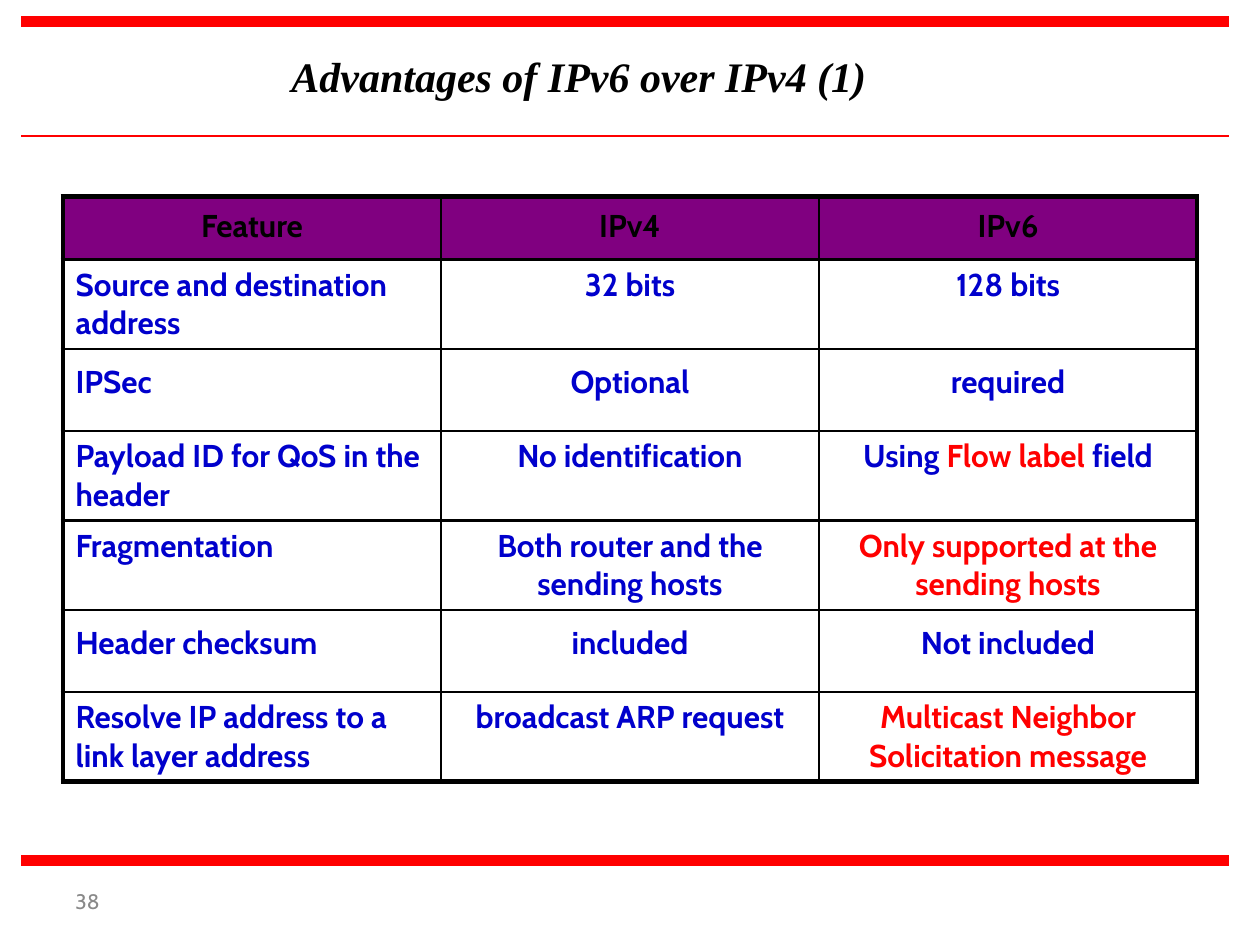
"""Build the slide that compares IPv4 and IPv6 features in a table."""
from lxml import etree
from pptx import Presentation, util as u
from pptx.dml.color import RGBColor
from pptx.enum import shapes, text
from pptx.oxml.ns import qn

COLORS = {"ink": "000000", "body": "0000CC", "accent": "FF0000",
          "header": "800080", "number": "898989"}
CENTER, LEFT = text.PP_ALIGN.CENTER, text.PP_ALIGN.LEFT


def write(p, words, font="Cabin", size=18, color="body", bold=True,
          italic=False, align=LEFT, spacing=1.0, before=0):
    """Fill a paragraph; parts between bars take the accent colour."""
    p.alignment, p.line_spacing, p.space_before = align, spacing, u.Pt(before)
    for i, part in enumerate(words.split("|")):
        if part:
            r = p.add_run()
            r.text = part
            f = r.font
            f.name, f.size, f.bold, f.italic = font, u.Pt(size), bold, italic
            f.color.rgb = RGBColor.from_string(COLORS["accent" if i % 2 else color])


def border(cell, widths):
    """Draw the left, right, top and bottom edges of a cell."""
    tcPr = cell._tc.get_or_add_tcPr()
    for i, (side, width) in enumerate(zip("LRTB", widths)):
        ln = etree.Element(qn(f"a:ln{side}"), w=str(u.Pt(width)))
        fill = etree.SubElement(ln, qn("a:solidFill"))
        etree.SubElement(fill, qn("a:srgbClr"), val=COLORS["ink"])
        tcPr.insert(i, ln)


prs = Presentation()
prs.slide_width, prs.slide_height = u.Inches(10), u.Inches(7.5)
slide = prs.slides.add_slide(prs.slide_layouts[5])

title = slide.shapes.title
title.left, title.top = u.Inches(0.42), u.Inches(0.17)
title.width, title.height = u.Inches(8.35), u.Inches(0.86)
title.text_frame.vertical_anchor = text.MSO_ANCHOR.MIDDLE
write(title.text_frame.paragraphs[0], "Advantages of IPv6 over IPv4 (1)",
      font="Times New Roman", size=24, color="ink", italic=True, align=CENTER)

rows = [
    (0.5, "Feature", "IPv4", "IPv6"),
    (0.71, "Source and destination address", "32 bits", "128 bits"),
    (0.65, "IPSec", "Optional", "required"),
    (0.71, "Payload ID for QoS in the header", "No identification",
     "Using |Flow label| field"),
    (0.71, "Fragmentation", "Both router and the sending hosts",
     "|Only supported at the sending hosts|"),
    (0.65, "Header checksum", "included", "Not included"),
    (0.7, "Resolve IP address to a link layer address",
     "broadcast ARP request", "|Multicast Neighbor Solicitation message|"),
]
last_row, last_col = len(rows) - 1, 2
table = slide.shapes.add_table(
    len(rows), 3, u.Inches(0.5), u.Inches(1.56), u.Inches(9),
    u.Inches(sum(row[0] for row in rows))).table
table.first_row = table.horz_banding = False

for i, (height, *words) in enumerate(rows):
    table.rows[i].height = u.Inches(height)
    header, loose = i == 0, height == 0.65
    for j, word in enumerate(words):
        cell = table.cell(i, j)
        if header:
            cell.fill.solid()
            cell.fill.fore_color.rgb = RGBColor.from_string(COLORS["header"])
        else:
            cell.fill.background()
        write(cell.text_frame.paragraphs[0], word,
              color="ink" if header else "body",
              align=CENTER if header or j else LEFT,
              spacing=1.1 if header else 1.2 if loose else 1.0,
              before=5.4 if loose else 3.6)
        outer = (j == 0, j == last_col, i == 0, i == last_row)
        border(cell, [3 if edge else 1.5 for edge in outer])

tf = slide.shapes.add_textbox(u.Inches(0.5), u.Inches(6.95),
                              u.Inches(2.33), u.Inches(0.4)).text_frame
tf.word_wrap = True
tf.vertical_anchor = text.MSO_ANCHOR.MIDDLE
write(tf.paragraphs[0], "38", size=12, color="number", bold=False)

for y, width in ((0.17, 6), (1.08, 1.5), (6.83, 6)):
    sp = slide.shapes.add_connector(
        shapes.MSO_CONNECTOR.STRAIGHT, u.Inches(0.17), u.Inches(y),
        u.Inches(9.75), u.Inches(y))
    sp.line.width = u.Pt(width)
    sp.line.color.rgb = RGBColor.from_string(COLORS["accent"])
    etree.SubElement(sp._element.spPr, qn("a:effectLst"))

prs.save("out.pptx")
